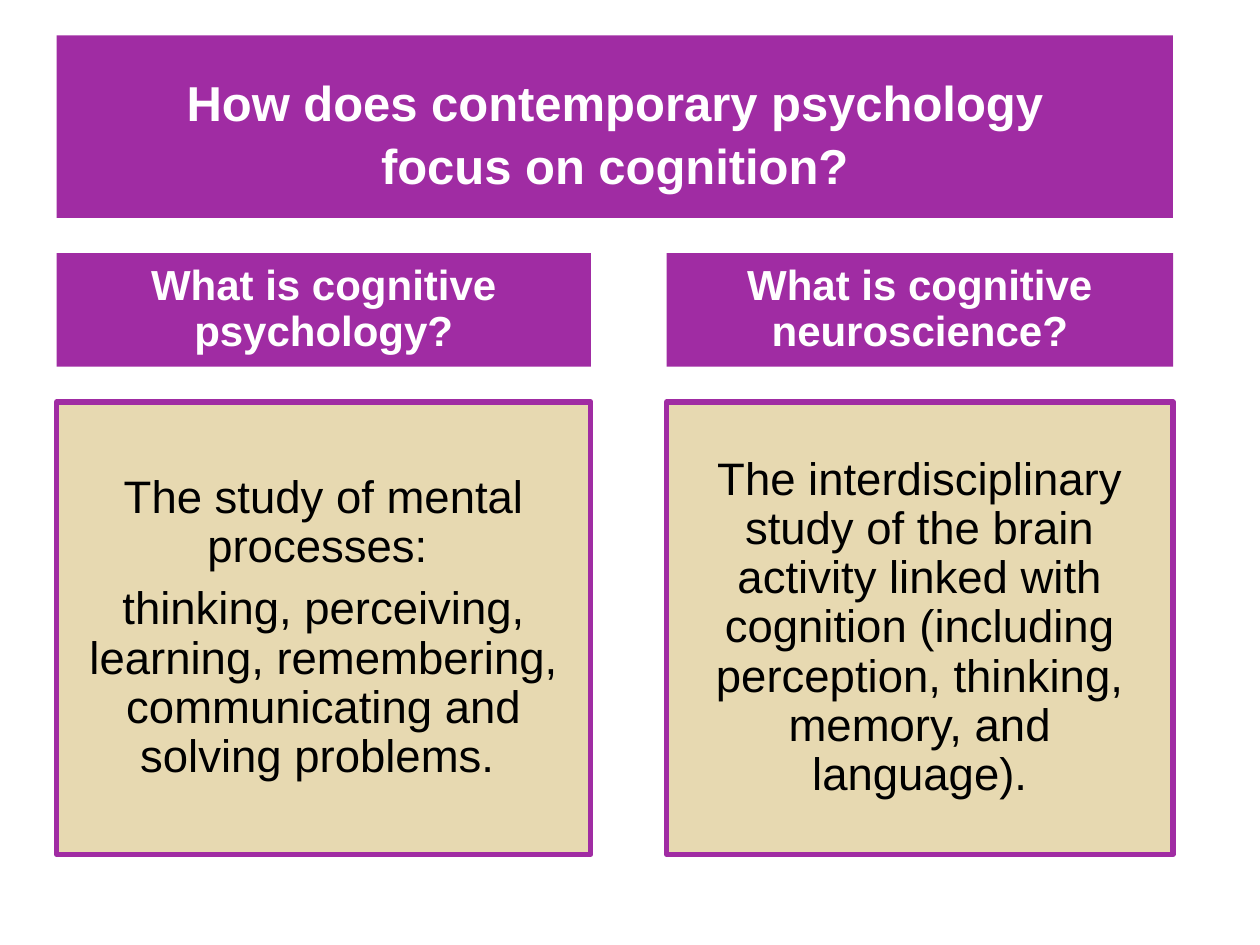
from pptx import Presentation
from pptx.dml.color import RGBColor as RGB
from pptx.enum.shapes import MSO_SHAPE as SHAPE
from pptx.enum.text import MSO_ANCHOR as ANCHOR, PP_ALIGN as ALIGN
from pptx.util import Inches, Pt

COLORS = {"purple": "A02CA3", "sand": "E7D9B1", "white": "FFFFFF", "black": "000000"}
TOP, GAP = 0.28, 0.28
TITLE_H, HEAD_H, BODY_H = 1.45, 0.9, 3.59
LEFT, WIDTH = 0.45, 8.86


def color(name):
    return RGB.from_string(COLORS[name])


def add_panel(s, box, fill, line=None):
    sp = s.shapes.add_shape(SHAPE.RECTANGLE, *map(Inches, box))
    sp.shadow.inherit = False
    sp.fill.solid()
    sp.fill.fore_color.rgb = color(fill)
    if line:
        sp.line.color.rgb = color(line)
        sp.line.width = Pt(3)
    else:
        sp.line.fill.background()
    tf = sp.text_frame
    tf.word_wrap = True
    tf.vertical_anchor = ANCHOR.MIDDLE
    return tf


def add_text(tf, paragraphs, size, ink="white", bold=False, spacing=0.9, before=7.5):
    for i, text in enumerate(paragraphs):
        p = tf.add_paragraph() if i else tf.paragraphs[0]
        p.alignment = ALIGN.CENTER
        p.line_spacing = spacing
        p.space_before = Pt(before)
        r = p.add_run()
        r.text = text
        r.font.name = "Arial"
        r.font.size = Pt(size)
        r.font.bold = bold
        r.font.color.rgb = color(ink)


def add_title(s, box, lines):
    tf = add_panel(s, box, "purple")
    tf.margin_top = Inches(0.13)
    add_text(tf, lines, 28, bold=True, spacing=1.07, before=0)


def add_column(s, box, heading, body):
    x, y, w, h = box
    add_text(add_panel(s, (x, y, w, HEAD_H), "purple"), [heading], 24, bold=True)
    body_box = (x, y + h - BODY_H, w, BODY_H)
    add_text(add_panel(s, body_box, "sand", line="purple"), body, 26, ink="black")


def main():
    prs = Presentation()
    prs.slide_width, prs.slide_height = Inches(10), Inches(7.5)
    s = prs.slides.add_slide(prs.slide_layouts[6])

    add_title(s, (LEFT, TOP, WIDTH, TITLE_H),
              ["How does contemporary psychology", "focus on cognition?"])

    columns = [
        (LEFT, 4.24, "What is cognitive psychology?",
         ["The study of mental processes: ",
          "thinking, perceiving, learning, remembering, communicating and solving problems. "]),
        (5.29, 4.02, "What is cognitive neuroscience?",
         ["The interdisciplinary study of the brain activity linked with cognition "
          "(including perception, thinking, memory, and language)."]),
    ]
    y = TOP + TITLE_H + GAP
    for x, w, heading, body in columns:
        add_column(s, (x, y, w, HEAD_H + GAP + BODY_H), heading, body)

    prs.save("out.pptx")


if __name__ == "__main__":
    main()
